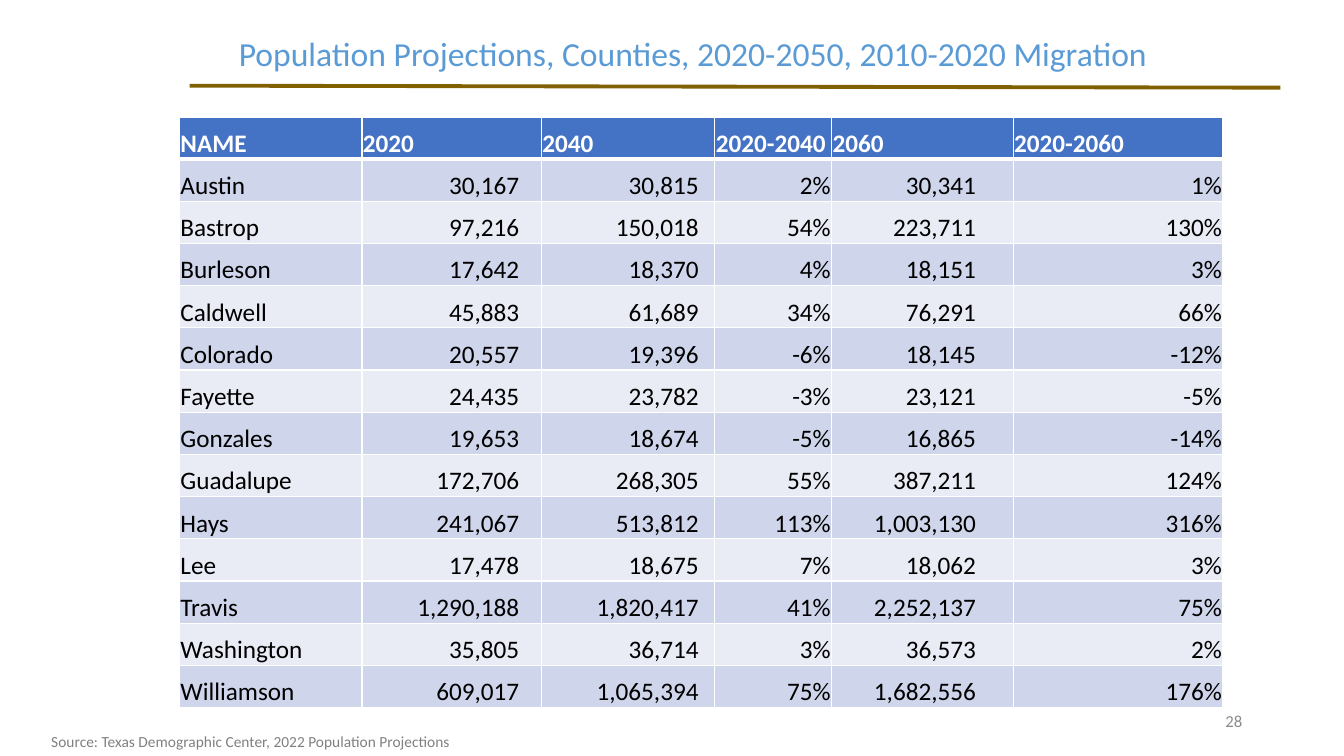
from lxml.etree import SubElement
from pptx import Presentation
from pptx.dml.color import RGBColor
from pptx.enum.shapes import MSO_CONNECTOR
from pptx.enum.text import MSO_ANCHOR, MSO_AUTO_SIZE, PP_ALIGN
from pptx.oxml.ns import qn
from pptx.util import Pt

PX = 9144
FONT = "Calibri"
WHITE = RGBColor(0xFF, 0xFF, 0xFF)
BLACK = RGBColor(0x00, 0x00, 0x00)
BLUE = RGBColor(0x5B, 0x9B, 0xD5)
HEADER_BLUE = RGBColor(0x44, 0x72, 0xC4)
BAND_DARK = RGBColor(0xCF, 0xD5, 0xEA)
BAND_LIGHT = RGBColor(0xE9, 0xEB, 0xF5)
BROWN = RGBColor(0x80, 0x60, 0x00)
GREY = RGBColor(0x80, 0x80, 0x80)
LIGHT_GREY = RGBColor(0x8C, 0x8C, 0x8C)

COLUMN_WIDTHS = [181, 178, 172, 116, 180, 208]
RIGHT_MARGINS = [1, 22, 16, 1, 37, 1]
TABLE_HEIGHT = 586
HEADER = ["NAME", "2020", "2040", "2020-2040", "2060", "2020-2060"]
COUNTIES = [
    ["Austin", "30,167", "30,815", "2%", "30,341", "1%"],
    ["Bastrop", "97,216", "150,018", "54%", "223,711", "130%"],
    ["Burleson", "17,642", "18,370", "4%", "18,151", "3%"],
    ["Caldwell", "45,883", "61,689", "34%", "76,291", "66%"],
    ["Colorado", "20,557", "19,396", "-6%", "18,145", "-12%"],
    ["Fayette", "24,435", "23,782", "-3%", "23,121", "-5%"],
    ["Gonzales", "19,653", "18,674", "-5%", "16,865", "-14%"],
    ["Guadalupe", "172,706", "268,305", "55%", "387,211", "124%"],
    ["Hays", "241,067", "513,812", "113%", "1,003,130", "316%"],
    ["Lee", "17,478", "18,675", "7%", "18,062", "3%"],
    ["Travis", "1,290,188", "1,820,417", "41%", "2,252,137", "75%"],
    ["Washington", "35,805", "36,714", "3%", "36,573", "2%"],
    ["Williamson", "609,017", "1,065,394", "75%", "1,682,556", "176%"],
]


def add_run(p, text, size, color, bold=False):
    r = p.add_run()
    r.text = text
    r.font.name = FONT
    r.font.size = Pt(size)
    r.font.bold = bold
    r.font.color.rgb = color


def add_text(s, box, text, size, color, align=PP_ALIGN.LEFT, anchor=MSO_ANCHOR.MIDDLE):
    tf = s.shapes.add_textbox(*(v * PX for v in box)).text_frame
    tf.word_wrap = True
    tf.vertical_anchor = anchor
    p = tf.paragraphs[0]
    p.alignment = align
    add_run(p, text, size, color)
    return tf


def add_rule(s, x1, y1, x2, y2):
    sp = s.shapes.add_connector(MSO_CONNECTOR.STRAIGHT, x1 * PX, y1 * PX, x2 * PX, y2 * PX)
    sp.line.color.rgb = BROWN
    sp.line.width = Pt(2.75)
    SubElement(sp._element.spPr, qn("a:effectLst"))


def add_borders(cell, row):
    tcPr = cell._tc.get_or_add_tcPr()
    widths = {"L": 1, "R": 1, "T": 3 if row == 1 else 1, "B": 3 if row == 0 else 1}
    for side, width in widths.items():
        ln = SubElement(tcPr, qn("a:ln" + side), w=str(Pt(width)))
        fill = SubElement(ln, qn("a:solidFill"))
        SubElement(fill, qn("a:srgbClr"), val=str(WHITE))


def fill_cell(cell, row, col, text):
    header = row == 0
    number = not header and col > 0
    add_borders(cell, row)
    cell.fill.solid()
    cell.fill.fore_color.rgb = HEADER_BLUE if header else BAND_DARK if row % 2 else BAND_LIGHT
    cell.vertical_anchor = MSO_ANCHOR.BOTTOM
    cell.margin_left = cell.margin_top = PX
    cell.margin_right = (RIGHT_MARGINS[col] if number else 1) * PX
    cell.margin_bottom = 0
    p = cell.text_frame.paragraphs[0]
    p.alignment = PP_ALIGN.RIGHT if number else PP_ALIGN.LEFT
    add_run(p, text, 18, WHITE if header else BLACK, header)


def add_projections(s, x, y):
    rows = [HEADER] + COUNTIES
    table = s.shapes.add_table(
        len(rows), len(HEADER), x * PX, y * PX, sum(COLUMN_WIDTHS) * PX, TABLE_HEIGHT * PX
    ).table
    for column, width in zip(table.columns, COLUMN_WIDTHS):
        column.width = width * PX
    for i, values in enumerate(rows):
        table.rows[i].height = TABLE_HEIGHT * PX // len(rows)
        for j, text in enumerate(values):
            fill_cell(table.cell(i, j), i, j, text)


def main():
    prs = Presentation()
    prs.slide_width, prs.slide_height = 1333 * PX, 750 * PX
    s = prs.slides.add_slide(prs.slide_layouts[6])
    add_rule(s, 188, 85, 1270, 87)
    add_text(s, (942, 695, 300, 40), "28", 12, LIGHT_GREY, PP_ALIGN.RIGHT)
    title = add_text(
        s, (227, 26, 984, 58),
        "Population Projections, Counties, 2020-2050, 2010-2020 Migration", 24, BLUE,
    )
    title.paragraphs[0].line_spacing = 0.9
    source = add_text(
        s, (41, 721, 422, 29),
        "Source: Texas Demographic Center, 2022 Population Projections", 11, GREY,
        anchor=MSO_ANCHOR.TOP,
    )
    source.word_wrap = False
    source.auto_size = MSO_AUTO_SIZE.SHAPE_TO_FIT_TEXT
    add_projections(s, 178, 116)
    prs.save("out.pptx")


if __name__ == "__main__":
    main()
